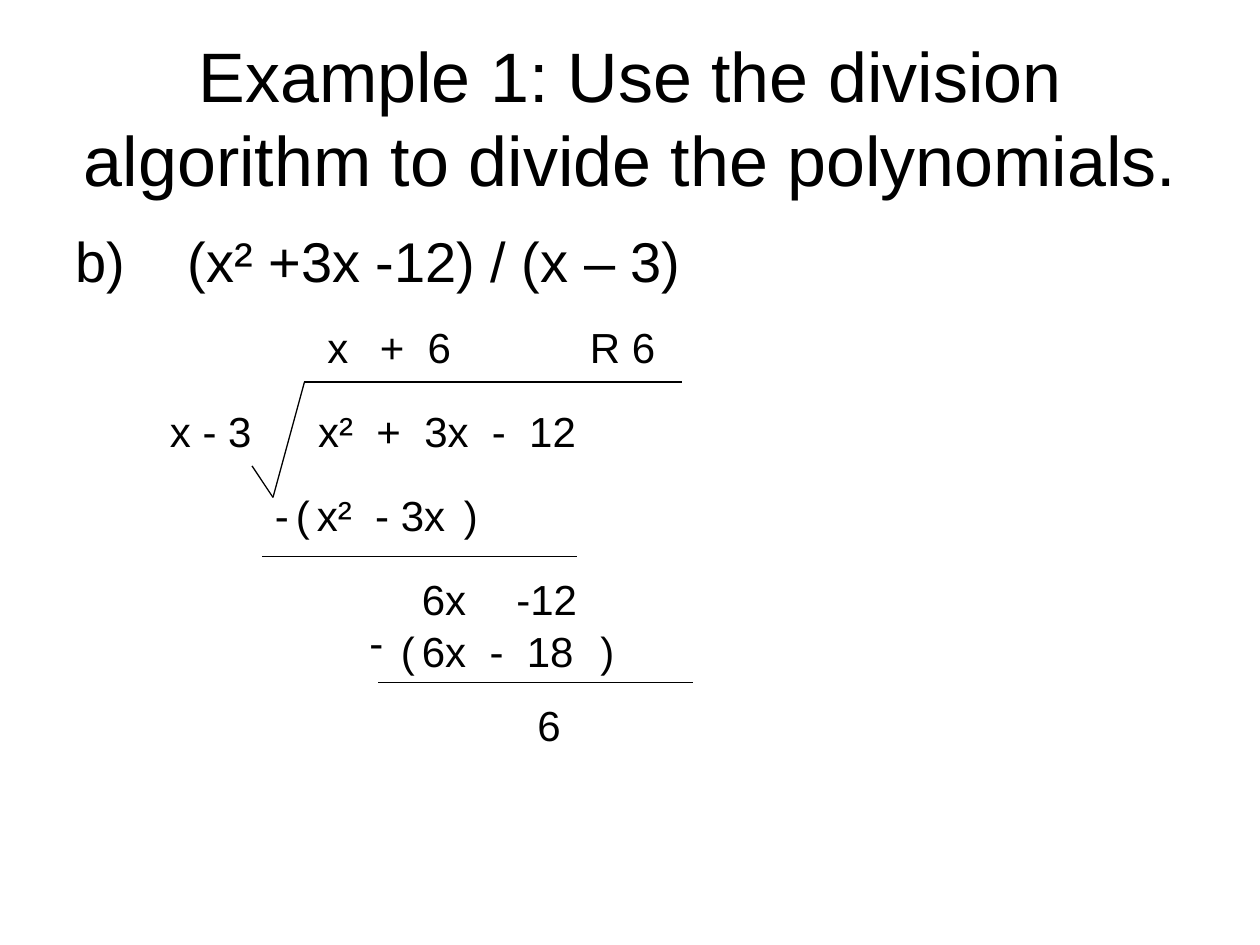
from lxml.etree import SubElement
from pptx import Presentation
from pptx.dml.color import RGBColor
from pptx.enum.shapes import MSO_CONNECTOR as Link
from pptx.enum.text import MSO_ANCHOR as Anchor, MSO_AUTO_SIZE as Fit, PP_ALIGN as Align
from pptx.oxml.ns import qn
from pptx.util import Emu, Pt

PX = 9525  # 96 px to the inch
FONT = "Arial"
COLORS = {"ink": "000000", "paper": "FFFFFF"}
SPACE = 0.278  # width of a space, in em

TITLE = "Example 1: Use the division algorithm to divide the polynomials."
TASK = ["b)", "(x² +3x -12) / (x – 3)"]

# Row top: (left, width, parts set apart by a wide gap)
ROWS = {
    240: [(240, 38, ["x"]), (280, 78, ["+", "6"]), (440, 72, ["R 6"])],
    304: [(120, 85, ["x - 3"]), (233, 222, ["x²", "+", "3x", "-", "12"])],
    368: [(200, 32, ["-"]), (216, 32, ["("]), (232, 122, ["x²", "- 3x"]),
          (344, 32, [")"])],
    432: [(312, 56, ["6x"]), (384, 70, ["-12"])],
    465: [(272, 32, ["-"])],
    472: [(296, 32, ["("]), (312, 140, ["6x", "-", "18"]), (448, 32, [")"])],
    528: [(400, 40, ["6"])],
}
ROW_H = 48

RULES = [
    (232, 291, 208, 379),
    (192, 355, 208, 379),
    (232, 291, 520, 291),
    (200, 424, 440, 424),
    (288, 520, 528, 520),
]


def px(*nums):
    return [Emu(n * PX) for n in nums]


def style(run, size):
    run.font.name = FONT
    run.font.size = Pt(size)
    run.font.color.rgb = RGBColor.from_string(COLORS["ink"])


def add_text(slide, box, parts, size, gap=2, wrap=False):
    """Add a text box whose parts stand apart by the width of gap spaces."""
    shape = slide.shapes.add_textbox(*px(*box))
    frame = shape.text_frame
    frame.word_wrap = wrap
    frame.auto_size = Fit.NONE if wrap else Fit.SHAPE_TO_FIT_TEXT
    para = frame.paragraphs[0]
    for i, part in enumerate(parts):
        if i:
            run = para.add_run()
            run.text = " "
            style(run, size)
            extra = round((gap - 1) * SPACE * size * 100)
            run.font._element.set("spc", str(extra))
        run = para.add_run()
        run.text = part
        style(run, size)


def add_rule(slide, ends):
    line = slide.shapes.add_connector(Link.STRAIGHT, *px(*ends))
    line.line.color.rgb = RGBColor.from_string(COLORS["ink"])
    line.line.width = Pt(0.75)
    SubElement(line._element.spPr, qn("a:effectLst"))


def add_title(slide):
    title = slide.shapes.title
    title.left, title.top, title.width, title.height = px(48, 29, 864, 120)
    frame = title.text_frame
    frame.text = TITLE
    frame.word_wrap = True
    frame.auto_size = Fit.NONE
    frame.vertical_anchor = Anchor.MIDDLE
    para = frame.paragraphs[0]
    para.alignment = Align.CENTER
    style(para.runs[0], 40)


def main():
    deck = Presentation()
    deck.slide_width, deck.slide_height = px(960, 720)
    slide = deck.slides.add_slide(deck.slide_layouts[5])
    fill = slide.background.fill
    fill.solid()
    fill.fore_color.rgb = RGBColor.from_string(COLORS["paper"])

    add_title(slide)
    add_text(slide, (48, 168, 632, 72), TASK, 32, gap=4, wrap=True)
    for top, cells in ROWS.items():
        for left, width, parts in cells:
            add_text(slide, (left, top, width, ROW_H), parts, 24)
    for ends in RULES:
        add_rule(slide, ends)
    deck.save("out.pptx")


if __name__ == "__main__":
    main()
